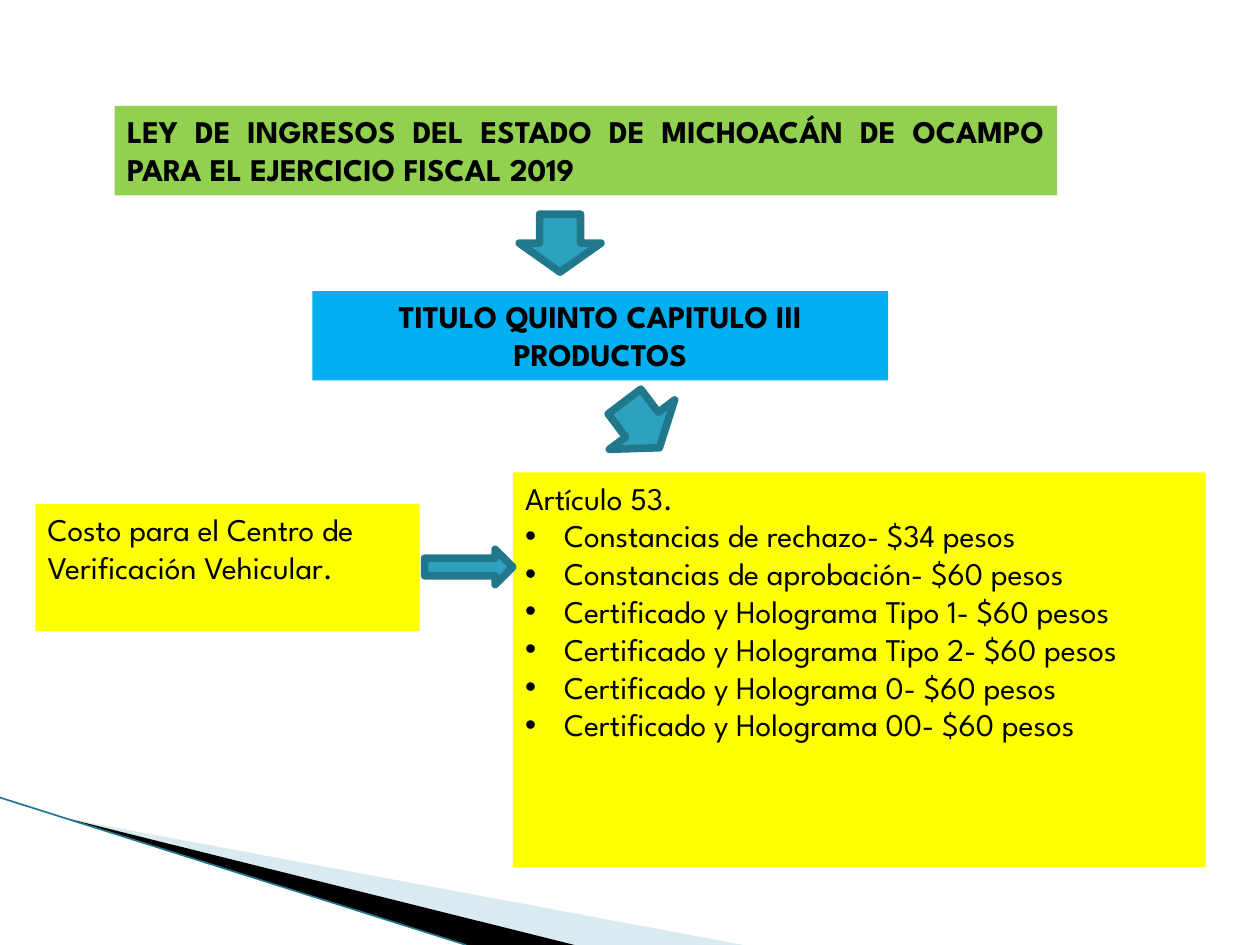
from lxml import etree
from pptx import Presentation
from pptx.dml.color import RGBColor
from pptx.enum.shapes import MSO_CONNECTOR, MSO_SHAPE
from pptx.enum.text import PP_ALIGN
from pptx.oxml.ns import qn
from pptx.util import Inches, Pt

COLORS = {
    "black": "000000",
    "green": "92D050",
    "blue": "00B0F0",
    "yellow": "FFFF00",
    "arrow": "2DA2BF",
    "arrow_edge": "21788D",
    "pale_wedge": "A0CBDC",
}
FONT = "League Spartan"
BULLET_INDENT = Inches(0.31)


def color(name):
    return RGBColor.from_string(COLORS[name])


def paint(shape, fill):
    shape.fill.solid()
    shape.fill.fore_color.rgb = color(fill)


def add_bullet(para):
    properties = para._p.get_or_add_pPr()
    properties.set("marL", str(BULLET_INDENT))
    properties.set("indent", str(-BULLET_INDENT))
    etree.SubElement(properties, qn("a:buFont")).set("typeface", "Arial")
    etree.SubElement(properties, qn("a:buChar")).set("char", "•")


def add_panel(page, box, fill, lines, align=PP_ALIGN.LEFT, bold=False, bullets_from=None):
    """Add a filled text panel; lines from index bullets_from onwards get bullets."""
    panel = page.shapes.add_textbox(*map(Inches, box))
    paint(panel, fill)
    frame = panel.text_frame
    frame.word_wrap = True
    for index, line in enumerate(lines):
        para = frame.paragraphs[0] if index == 0 else frame.add_paragraph()
        para.text = line
        para.alignment = align
        if bullets_from is not None and index >= bullets_from:
            add_bullet(para)
        para.font.name = FONT
        para.font.size = Pt(18)
        para.font.bold = bold
        para.font.color.rgb = color("black")


def add_arrow(page, box, kind, rotation=0):
    arrow = page.shapes.add_shape(kind, *map(Inches, box))
    arrow.shadow.inherit = False
    arrow.rotation = rotation
    paint(arrow, "arrow")
    arrow.line.color.rgb = color("arrow_edge")
    arrow.line.width = Pt(4.33)


def add_wedge(page, points, fill, alpha=None):
    start, *others = [(Inches(x), Inches(y)) for x, y in points]
    builder = page.shapes.build_freeform(*start)
    builder.add_line_segments(others, close=True)
    wedge = builder.convert_to_shape()
    wedge.shadow.inherit = False
    wedge.line.fill.background()
    paint(wedge, fill)
    if alpha is not None:
        tone = wedge._element.spPr.find(qn("a:solidFill"))[0]
        etree.SubElement(tone, qn("a:alpha")).set("val", str(alpha * 1000))


def add_corner_decoration(page, box):
    """Draw the wedges and the thin line that sweep across the lower left corner."""
    left, top, width, height = box
    bottom = top + height
    tip = (left + 0.55, top + 0.17)
    add_wedge(page, [tip, (left + width, bottom), (left + 4.56, bottom)], "pale_wedge", 40)
    add_wedge(page, [tip, (left + 4.56, bottom), (left + 3.7, bottom)], "black")
    edge = page.shapes.add_connector(
        MSO_CONNECTOR.STRAIGHT,
        *map(Inches, (left, top, left + 3.7, bottom)),
    )
    edge.line.color.rgb = color("arrow_edge")
    edge.line.width = Pt(0.95)
    etree.SubElement(edge._element.spPr, qn("a:effectLst"))


def add_law_flow(page):
    add_panel(
        page, (0.91, 0.84, 7.48, 0.71), "green",
        ["LEY DE INGRESOS DEL ESTADO DE MICHOACÁN DE OCAMPO PARA EL EJERCICIO FISCAL 2019"],
        PP_ALIGN.JUSTIFY, bold=True,
    )
    add_panel(
        page, (2.48, 2.31, 4.57, 0.71), "blue",
        ["TITULO QUINTO CAPITULO III", "PRODUCTOS"],
        PP_ALIGN.CENTER, bold=True,
    )
    add_arrow(page, (4.77, 3.14, 0.65, 0.46), MSO_SHAPE.DOWN_ARROW, 322.9)
    add_arrow(page, (4.12, 1.7, 0.65, 0.46), MSO_SHAPE.DOWN_ARROW)


def add_costs(page):
    fees = [
        ("Constancias de rechazo", 34),
        ("Constancias de aprobación", 60),
        ("Certificado y Holograma Tipo 1", 60),
        ("Certificado y Holograma Tipo 2", 60),
        ("Certificado y Holograma 0", 60),
        ("Certificado y Holograma 00", 60),
    ]
    lines = ["Artículo 53."] + [f"{item}- ${price} pesos" for item, price in fees]
    add_panel(page, (4.07, 3.75, 5.5, 3.13), "yellow", lines, bullets_from=1)
    add_panel(
        page, (0.28, 4, 3.05, 1.01), "yellow",
        ["Costo para el Centro de Verificación Vehicular."],
    )
    add_arrow(page, (3.37, 4.36, 0.7, 0.28), MSO_SHAPE.RIGHT_ARROW)


def main():
    deck = Presentation()
    deck.slide_width, deck.slide_height = Inches(10), Inches(7.5)
    page = deck.slides.add_slide(deck.slide_layouts[6])
    add_corner_decoration(page, (0, 6.33, 5.9, 1.17))
    add_law_flow(page)
    add_costs(page)
    deck.save("out.pptx")


if __name__ == "__main__":
    main()
